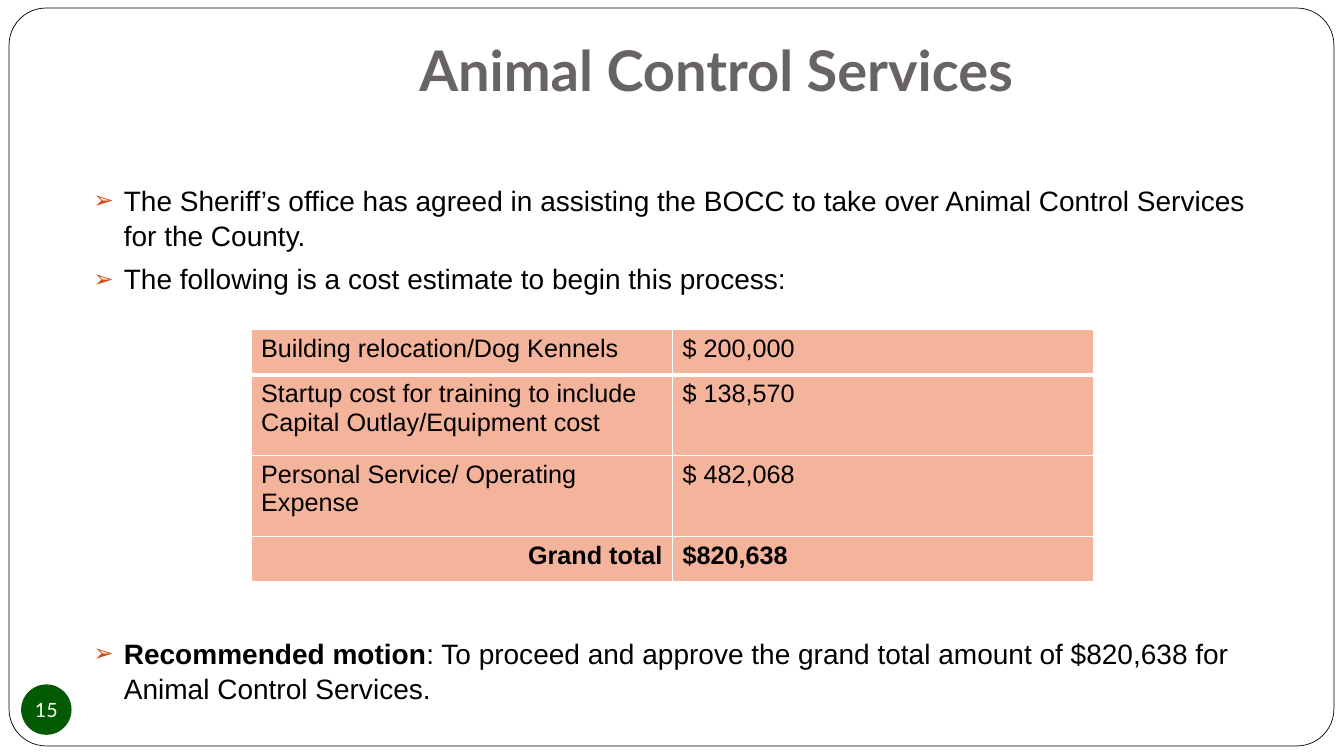
import pptx
import pptx.util
import pptx.dml.color
import pptx.enum.shapes
import pptx.enum.text
import pptx.oxml
import pptx.oxml.ns
import lxml.etree

Inches, Pt = pptx.util.Inches, pptx.util.Pt
ALIGN = pptx.enum.text.PP_ALIGN
SHAPE = pptx.enum.shapes.MSO_SHAPE
qn = pptx.oxml.ns.qn

TITLE = "Animal Control Services "
PAGE = "15"
BODY_LEFT, BODY_WIDTH = 0.83, 11.67
POINTS = [
    (1.75, 1.4, [
        [("The Sheriff’s office has agreed in assisting the BOCC to take over "
          "Animal Control Services for the County.", False)],
        [("The following is a cost estimate to begin this process:", False)],
    ]),
    (6.25, 0.85, [
        [("Recommended motion", True),
         (": To proceed and approve the grand total amount of $820,638 for "
          "Animal Control Services.", False)],
    ]),
]
COSTS = [
    ("Building relocation/Dog Kennels", "$ 200,000", 0.45),
    ("Startup cost for training to include Capital Outlay/Equipment cost", "$ 138,570", 0.8),
    ("Personal Service/ Operating Expense", "$ 482,068", 0.8),
    ("Grand total", "$820,638", 0.45),
]


def color(hex_code):
    return pptx.dml.color.RGBColor.from_string(hex_code)


def add_run(paragraph, text, size, font, hex_code, bold=False):
    run = paragraph.add_run()
    run.text = text
    run.font.size = Pt(size)
    run.font.name = font
    run.font.bold = bold
    run.font.color.rgb = color(hex_code)


def add_bullet(paragraph):
    properties = paragraph._p.get_or_add_pPr()
    properties.set("marL", str(Inches(0.3)))
    properties.set("indent", str(-Inches(0.3)))
    tint = lxml.etree.SubElement(properties, qn("a:buClr"))
    lxml.etree.SubElement(tint, qn("a:srgbClr"), val="D34817")
    lxml.etree.SubElement(properties, qn("a:buSzPct"), val="85000")
    lxml.etree.SubElement(properties, qn("a:buFont"), typeface="Arial")
    lxml.etree.SubElement(properties, qn("a:buChar"), char="➢")


def add_border(cell, side, width):
    line = lxml.etree.SubElement(cell._tc.get_or_add_tcPr(), qn("a:ln" + side), w=str(Pt(width)))
    fill = lxml.etree.SubElement(line, qn("a:solidFill"))
    lxml.etree.SubElement(fill, qn("a:srgbClr"), val="FFFFFF")


def add_box(slide, left, top, width, height):
    frame = slide.shapes.add_textbox(*map(Inches, (left, top, width, height))).text_frame
    frame.word_wrap = True
    return frame


def add_plain_shape(slide, kind, left, top, width, height, fill):
    shape = slide.shapes.add_shape(kind, *map(Inches, (left, top, width, height)))
    shape.shadow.inherit = False
    shape.fill.solid()
    shape.fill.fore_color.rgb = color(fill)
    return shape


def add_costs(slide):
    costs = slide.shapes.add_table(len(COSTS), 2, Inches(2.49), Inches(3.27),
                                   Inches(8.36), Inches(2.5)).table
    for column in costs.columns:
        column.width = Inches(4.18)
    last = len(COSTS) - 1
    for row, (item, amount, height) in enumerate(COSTS):
        costs.rows[row].height = Inches(height)
        for column, text in enumerate((item, amount)):
            cell = costs.cell(row, column)
            widths = {"L": 1, "R": 1, "T": 3 if row == 1 else 1, "B": 3 if row == 0 else 1}
            for side, width in widths.items():
                add_border(cell, side, width)
            cell.fill.solid()
            cell.fill.fore_color.rgb = color("F4B39B")
            paragraph = cell.text_frame.paragraphs[0]
            paragraph.alignment = ALIGN.RIGHT if (row, column) == (last, 0) else ALIGN.LEFT
            add_run(paragraph, text, 18, "Arial", "000000", row == last)


def main():
    deck = pptx.Presentation()
    deck.slide_width, deck.slide_height = Inches(13.33), Inches(7.5)
    slide = deck.slides.add_slide(deck.slide_layouts[6])

    border = add_plain_shape(slide, SHAPE.ROUNDED_RECTANGLE, 0.09, 0.08, 13.14, 7.32, "FFFFFF")
    border.adjustments[0] = 0.05
    border.line.color.rgb = color("000000")
    border.line.width = Pt(0.5)

    title = add_box(slide, 2.67, 0.3, 9, 1.25)
    title.paragraphs[0].alignment = ALIGN.CENTER
    add_run(title.paragraphs[0], TITLE, 40, "Lato", "696464", True)

    for top, height, bullets in POINTS:
        body = add_box(slide, BODY_LEFT, top, BODY_WIDTH, height)
        for index, pieces in enumerate(bullets):
            paragraph = body.add_paragraph() if index else body.paragraphs[0]
            add_bullet(paragraph)
            paragraph.line_spacing = 1.05
            paragraph.space_after = Pt(6)
            for text, bold in pieces:
                add_run(paragraph, text, 20, "Arial", "000000", bold)

    badge = add_plain_shape(slide, SHAPE.OVAL, 0.21, 6.79, 0.5, 0.5, "025A02")
    badge.line.fill.background()
    number = badge.text_frame
    number.margin_left = number.margin_right = number.margin_top = number.margin_bottom = 0
    number.word_wrap = False
    number.vertical_anchor = pptx.enum.text.MSO_ANCHOR.MIDDLE
    number.paragraphs[0].alignment = ALIGN.CENTER
    add_run(number.paragraphs[0], PAGE, 14, "Lato", "FFFFFF")

    add_costs(slide)
    deck.save("out.pptx")


if __name__ == "__main__":
    main()
